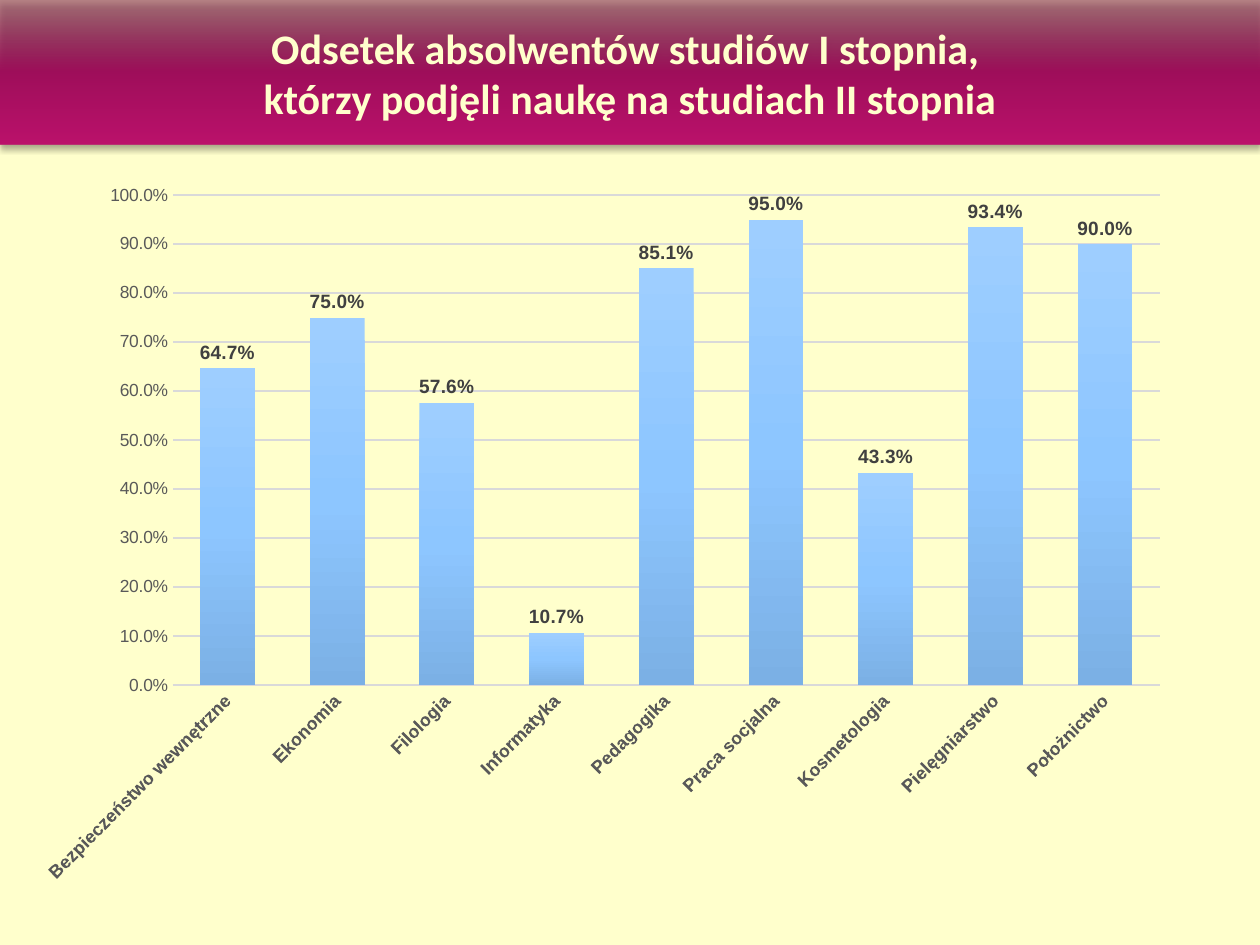
from lxml.etree import SubElement
from pptx import Presentation
from pptx.chart.data import CategoryChartData
from pptx.dml.color import RGBColor
from pptx.enum.chart import XL_CHART_TYPE, XL_LABEL_POSITION, XL_TICK_MARK
from pptx.enum.text import MSO_ANCHOR, MSO_AUTO_SIZE, PP_ALIGN
from pptx.oxml import parse_xml
from pptx.oxml.ns import nsdecls, qn
from pptx.util import Cm, Pt

TITLE = ["Odsetek absolwentów studiów I stopnia, ",
         "którzy podjęli naukę na studiach II stopnia"]
SHARES = {
    "Bezpieczeństwo wewnętrzne": 0.647,
    "Ekonomia": 0.75,
    "Filologia": 0.576,
    "Informatyka": 0.107,
    "Pedagogika": 0.851,
    "Praca socjalna": 0.95,
    "Kosmetologia": 0.433,
    "Pielęgniarstwo": 0.934,
    "Położnictwo": 0.9,
}
COLORS = {"cream": "FFFFCC", "black": "000000", "grid": "D9D9D9",
          "axis": "595959", "label": "404040"}
# Gradient stops from top to bottom: colour and opacity in percent
BANNER = [("6F0A3F", 49), ("9E0E5A", 100), ("BB116B", 100)]
BARS = [("9ECEFF", 100), ("8DC6FF", 100), ("7BB0E5", 100)]
PLOT = {"x": 0.105, "y": 0.028, "w": 0.881, "h": 0.686}
PERCENT = "0.0%"


def color(name):
    return RGBColor.from_string(COLORS[name])


def style(font, size, tint, bold=False, face="Arial"):
    font.size, font.bold, font.name = Pt(size), bold, face
    font.color.rgb = color(tint)


def write(frame, lines, align=PP_ALIGN.CENTER, **fmt):
    for i, line in enumerate(lines):
        para = frame.paragraphs[0] if i == 0 else frame.add_paragraph()
        para.alignment = align
        run = para.add_run()
        run.text = line
        style(run.font, **fmt)


def shade(props, stops):
    """Append a downward gradient with evenly spaced stops to shape properties."""
    last = len(stops) - 1
    marks = "".join(
        f'<a:gs pos="{100000 * i // last}"><a:srgbClr val="{tint}">'
        f'<a:alpha val="{alpha * 1000}"/></a:srgbClr></a:gs>'
        for i, (tint, alpha) in enumerate(stops))
    props.append(parse_xml(
        f'<a:gradFill {nsdecls("a")} rotWithShape="1"><a:gsLst>{marks}</a:gsLst>'
        '<a:lin ang="5400000" scaled="0"/></a:gradFill>'))


def cast(props):
    """Append a soft shadow that falls straight down."""
    props.append(parse_xml(
        f'<a:effectLst {nsdecls("a")}><a:outerShdw blurRad="{Pt(3.5)}" '
        f'dist="{Pt(2.2)}" dir="5400000" rotWithShape="0">'
        f'<a:srgbClr val="{COLORS["black"]}"><a:alpha val="32000"/></a:srgbClr>'
        '</a:outerShdw></a:effectLst>'))


def place(chart):
    """Fix the inner plot area as fractions of the chart frame."""
    area = chart._chartSpace.chart.plotArea
    for old in area.findall(qn("c:layout")):
        area.remove(old)
    layout = parse_xml(f'<c:layout {nsdecls("c")}/>')
    manual = SubElement(layout, qn("c:manualLayout"))
    parts = {"layoutTarget": "inner", "xMode": "edge", "yMode": "edge", **PLOT}
    for tag, val in parts.items():
        SubElement(manual, qn(f"c:{tag}")).set("val", str(val))
    area.insert(0, layout)


def add_title(slide, width):
    title = slide.shapes.title
    title.left, title.top, title.width, title.height = 0, 0, width, Cm(2.92)
    props = title._element.spPr
    shade(props, BANNER)
    cast(props)
    frame = title.text_frame
    frame.auto_size = MSO_AUTO_SIZE.NONE
    frame.vertical_anchor = MSO_ANCHOR.MIDDLE
    write(frame, TITLE, size=24, tint="cream", bold=True, face="Calibri")


def add_bars(slide):
    data = CategoryChartData(number_format=PERCENT)
    data.categories = list(SHARES)
    data.add_series("Series 1", list(SHARES.values()))
    chart = slide.shapes.add_chart(
        XL_CHART_TYPE.COLUMN_CLUSTERED,
        Cm(0.89), Cm(3.53), Cm(22.81), Cm(14.4), data).chart
    chart.has_title = chart.has_legend = False
    style(chart.font, 10, "black")
    place(chart)

    plot = chart.plots[0]
    plot.gap_width, plot.overlap, plot.vary_by_categories = 100, -24, False
    shade(plot.series[0]._element.get_or_add_spPr(), BARS)
    plot.has_data_labels = True
    labels = plot.data_labels
    labels.show_value = True
    labels.position = XL_LABEL_POSITION.OUTSIDE_END
    labels.number_format, labels.number_format_is_linked = PERCENT, False
    style(labels.font, 11, "label", bold=True)

    cats, vals = chart.category_axis, chart.value_axis
    for axis in (cats, vals):
        axis.major_tick_mark = axis.minor_tick_mark = XL_TICK_MARK.NONE
    style(cats.tick_labels.font, 10.5, "axis", bold=True)
    cats._element.find(f'{qn("c:txPr")}/{qn("a:bodyPr")}').set("rot", "-2700000")
    cats.format.line.color.rgb = color("grid")
    cats.format.line.width = Pt(1)

    style(vals.tick_labels.font, 10, "axis")
    vals.tick_labels.number_format = PERCENT
    vals.tick_labels.number_format_is_linked = False
    vals.minimum_scale, vals.maximum_scale, vals.major_unit = 0, 1, 0.1
    vals.format.line.fill.background()
    grid = vals.major_gridlines.format.line
    grid.color.rgb, grid.width = color("grid"), Pt(0.75)


def main():
    deck = Presentation()
    deck.slide_width, deck.slide_height = Cm(25.4), Cm(19.05)
    slide = deck.slides.add_slide(deck.slide_layouts[5])
    back = slide.background.fill
    back.solid()
    back.fore_color.rgb = color("cream")
    add_title(slide, deck.slide_width)
    add_bars(slide)
    deck.save("out.pptx")


if __name__ == "__main__":
    main()
